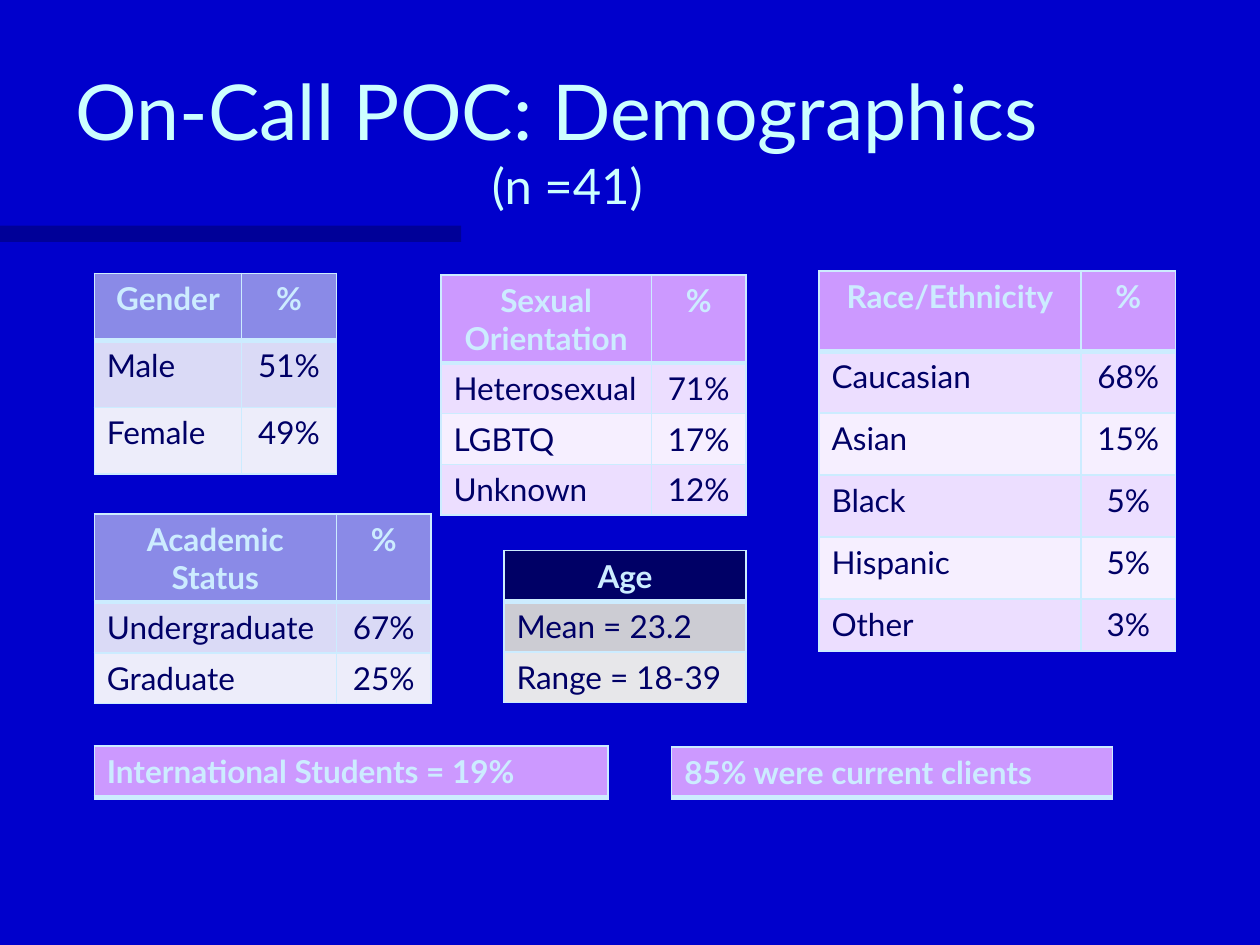
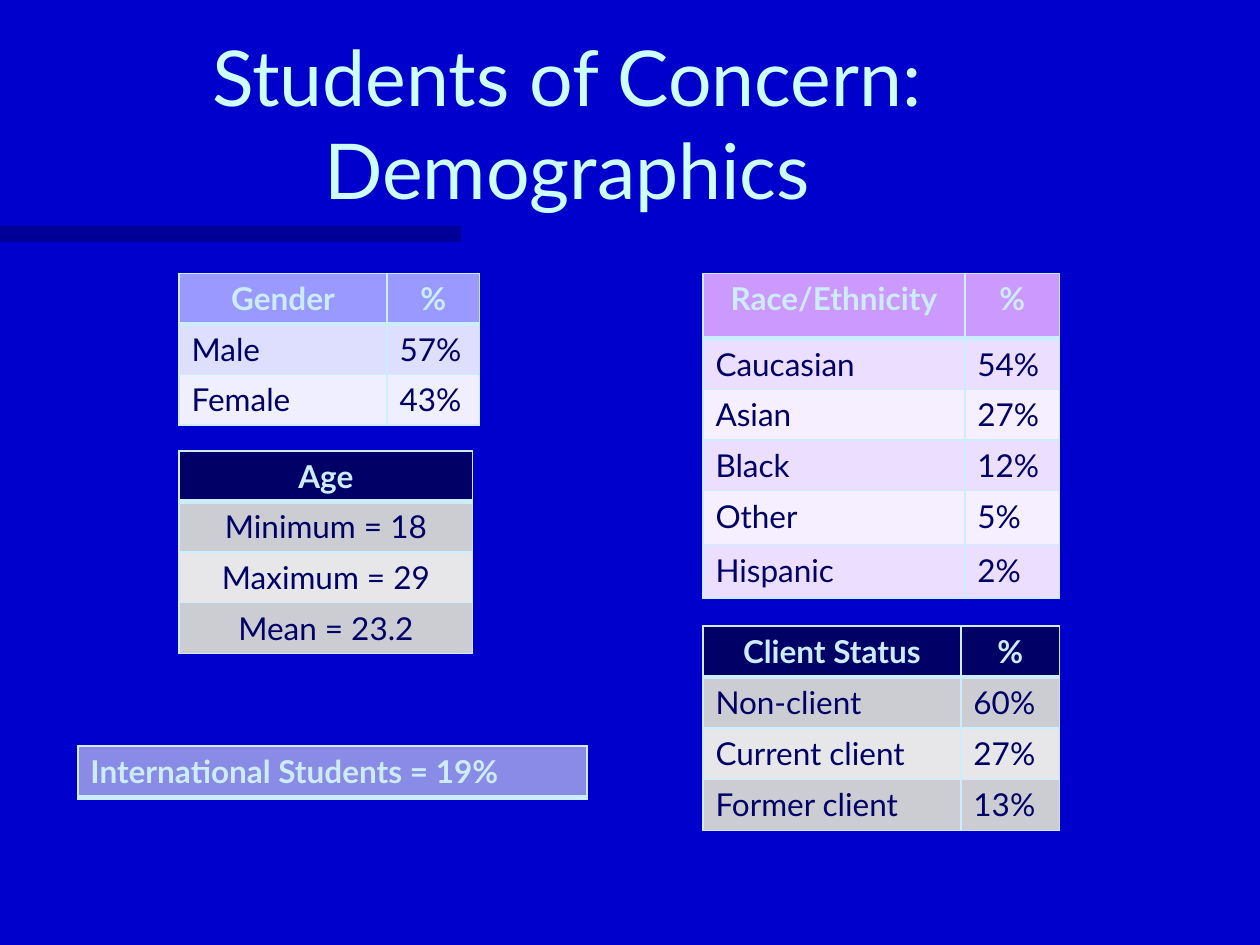
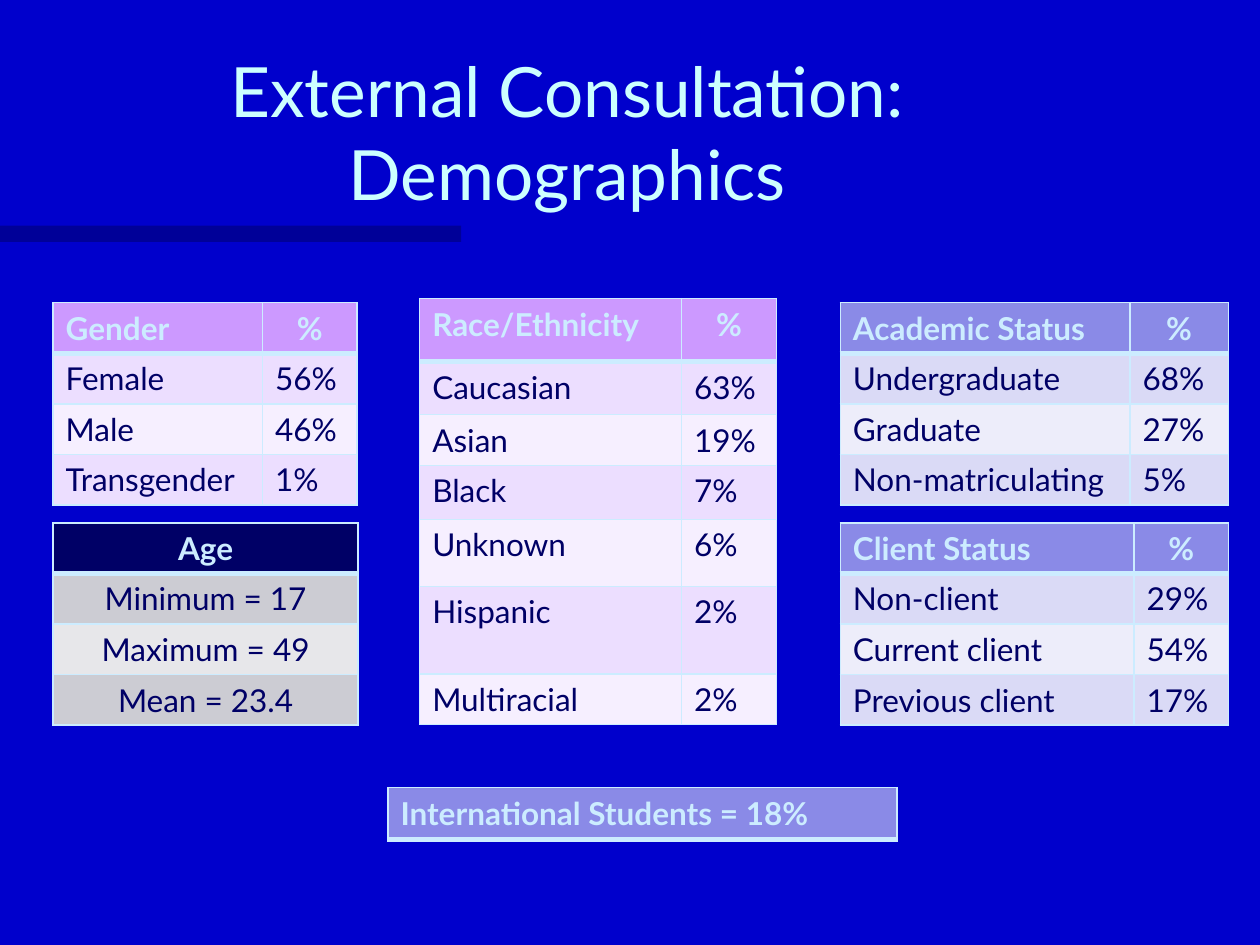
from lxml.etree import SubElement as Sub
from pptx import Presentation
from pptx.dml.color import RGBColor as Rgb
from pptx.enum.shapes import MSO_SHAPE as Shape
from pptx.enum.text import MSO_ANCHOR as Anchor, MSO_AUTO_SIZE as Fit, PP_ALIGN as Align
from pptx.oxml.ns import qn
from pptx.util import Cm, Pt

BLUE = Rgb(0x00, 0x00, 0xCC)
NAVY = Rgb(0x00, 0x00, 0x66)
ICE = Rgb(0xCC, 0xEC, 0xFF)
AQUA = Rgb(0xCC, 0xFF, 0xFF)

SLATE = (Rgb(0x8A, 0x8A, 0xE7), Rgb(0xDA, 0xDA, 0xF6), Rgb(0xED, 0xED, 0xFA))
SKY = (Rgb(0x99, 0x99, 0xFF), Rgb(0xDE, 0xDE, 0xFF), Rgb(0xEF, 0xEF, 0xFF))
LILAC = (Rgb(0xCC, 0x99, 0xFF), Rgb(0xEC, 0xDE, 0xFF), Rgb(0xF6, 0xEF, 0xFF))
DARK = (NAVY, Rgb(0xCC, 0xCC, 0xD3), Rgb(0xE7, 0xE7, 0xEA))

SIDE = {"l": Align.LEFT, "c": Align.CENTER}
HEAD = {"name": "Lato", "size": Pt(18), "bold": True}
BODY = {**HEAD, "bold": False}
ROW = 1.02
TALL = 1.76


def format_font(font, look, color):
    for key, value in look.items():
        setattr(font, key, value)
    font.color.rgb = color


class Deck:
    def __init__(self):
        self.pres = Presentation()
        self.pres.slide_width, self.pres.slide_height = Cm(25.4), Cm(19.05)
        self.master = self.pres.slide_master
        fill = self.master.background.fill
        fill.solid()
        fill.fore_color.rgb = BLUE
        self.slide = None

    def band(self):
        bar = self.slide.shapes.add_shape(Shape.RECTANGLE, 0, Cm(4.55), Cm(9.3), Cm(0.33))
        bar.shadow.inherit = False
        bar.line.fill.background()
        bar.fill.solid()
        bar.fill.fore_color.rgb = NAVY
        node = bar._element
        Sub(node.find(".//" + qn("a:srgbClr")), qn("a:alpha"), val="50000")
        node.nvSpPr.cNvPr.set("id", "20")
        self.master.shapes._spTree.insert(2, node)

    def page(self, text, size=44, note=None):
        first = self.slide is None
        self.slide = self.pres.slides.add_slide(self.pres.slide_layouts[5])
        if first:
            self.band()
        title = self.slide.shapes.title
        box = {"left": Cm(0.64), "top": Cm(1.27), "width": Cm(21.59), "height": Cm(3.18)}
        for key, value in box.items():
            setattr(title, key, value)
        frame = title.text_frame
        frame.word_wrap = True
        frame.auto_size = Fit.NONE
        frame.vertical_anchor = Anchor.BOTTOM
        para = frame.paragraphs[0]
        para.alignment = Align.CENTER
        self.run(para, text, size)
        if note:
            para.add_line_break()
            self.run(para, note, 28)

    def run(self, para, text, size):
        run = para.add_run()
        run.text = text
        format_font(run.font, {"name": "Lato", "size": Pt(size)}, AQUA)

    def edge(self, cell, top, low):
        props = cell._tc.get_or_add_tcPr()
        for spot, (tag, width) in enumerate(zip(("lnL", "lnR", "lnT", "lnB"), (1, 1, top, low))):
            line = Sub(props, qn("a:" + tag), w=str(Pt(width)))
            Sub(Sub(line, qn("a:solidFill")), qn("a:srgbClr"), val=str(ICE))
            props.insert(spot, line)

    def grid(self, left, top, cols, tones, cells, sides="cc", head="cc", rows=None):
        rows = rows or [ROW] * len(cells)
        frame = self.slide.shapes.add_table(len(cells), len(cols), Cm(left), Cm(top),
                                            Cm(sum(cols)), Cm(sum(rows)))
        table = frame.table
        table.first_row = table.horz_banding = False
        for col, width in zip(table.columns, cols):
            col.width = Cm(width)
        for row, height in zip(table.rows, rows):
            row.height = Cm(height)
        for r, words in enumerate(cells):
            for c, word in enumerate(words):
                cell = table.cell(r, c)
                cell.fill.solid()
                cell.fill.fore_color.rgb = tones[0] if r == 0 else tones[2 - r % 2]
                self.edge(cell, 3 if r == 1 else 1, 3 if r == 0 else 1)
                para = cell.text_frame.paragraphs[0]
                para.alignment = SIDE[(sides if r else head)[c]]
                run = para.add_run()
                run.text = word
                format_font(run.font, BODY if r else HEAD, NAVY if r else ICE)

    def share(self, left, top, cols, tones, name, data, **more):
        cells = [(name, "%")] + [(label, f"{part}%") for label, part in data.items()]
        self.grid(left, top, cols, tones, cells, **more)

    def age(self, left, top, width, facts, side="c"):
        self.grid(left, top, [width], DARK, [("Age",)] + [(fact,) for fact in facts], sides=side)

    def strip(self, left, top, width, tones, text, height=1.04):
        self.grid(left, top, [width], tones, [(text,)], head="l", rows=[height])


def main():
    deck = Deck()

    deck.page("On-Call POC: Demographics ", note="(n =41)")
    deck.share(1.9, 5.51, (2.97, 1.91), SLATE, "Gender", {"Male": 51, "Female": 49},
               sides="lc", rows=[1.35] * 3)
    deck.share(1.9, 10.36, (4.88, 1.91), SLATE, "Academic Status",
               {"Undergraduate": 67, "Graduate": 25}, sides="lc", rows=[TALL, ROW, ROW])
    deck.share(16.51, 5.46, (5.28, 1.91), LILAC, "Race/Ethnicity",
               {"Caucasian": 68, "Asian": 15, "Black": 5, "Hispanic": 5, "Other": 3},
               sides="lc", rows=[1.62] + [1.25] * 4 + [1.04])
    deck.share(8.89, 5.54, (4.24, 1.91), LILAC, "Sexual Orientation",
               {"Heterosexual": 71, "LGBTQ": 17, "Unknown": 12},
               sides="lc", rows=[TALL] + [ROW] * 3)
    deck.strip(1.9, 15.04, 10.36, LILAC, "International Students = 19%")
    deck.strip(13.54, 15.06, 8.89, LILAC, "85% were current clients", ROW)
    deck.age(10.16, 11.1, 4.88, ("Mean = 23.2", "Range = 18-39"), "l")

    deck.page("Students of Concern: Demographics")
    deck.age(3.61, 9.09, 5.92, ("Minimum = 18", "Maximum = 29", "Mean = 23.2"))
    deck.share(14.17, 5.51, (5.28, 1.91), LILAC, "Race/Ethnicity",
               {"Caucasian": 54, "Asian": 27, "Black": 12, "Other": 5, "Hispanic": 2},
               sides="ll", rows=[1.32, ROW, ROW, ROW, 1.09, 1.07])
    deck.strip(1.57, 15.04, 10.26, SLATE, "International Students = 19%")
    deck.share(3.61, 5.51, (4.19, 1.87), SKY, "Gender", {"Male": 57, "Female": 43}, sides="ll")
    deck.share(14.17, 12.62, (5.2, 1.99), DARK, "Client Status",
               {"Non-client": 60, "Current client": 27, "Former client": 13},
               sides="ll", rows=[1.03] * 4)

    deck.page("External Consultation: Demographics", 39.6)
    deck.share(1.07, 6.1, (4.22, 1.91), LILAC, "Gender",
               {"Female": 56, "Male": 46, "Transgender": 1}, sides="ll", head="lc")
    deck.age(1.07, 10.54, 6.15, ("Minimum = 17", "Maximum = 49", "Mean = 23.4"))
    deck.share(8.46, 6.02, (5.28, 1.91), LILAC, "Race/Ethnicity",
               {"Caucasian": 63, "Asian": 19, "Black": 7, "Unknown": 6,
                "Hispanic": 2, "Multiracial": 2},
               sides="ll", head="lc", rows=[1.27, 1.07, ROW, 1.09, 1.35, 1.77, ROW])
    deck.share(16.94, 6.1, (5.84, 1.98), SLATE, "Academic Status",
               {"Undergraduate": 68, "Graduate": 27, "Non-matriculating": 5},
               sides="ll", head="lc")
    deck.share(16.94, 10.54, (5.92, 1.91), SLATE, "Client Status",
               {"Non-client": 29, "Current client": 54, "Previous client": 17},
               sides="ll", head="lc")
    deck.strip(7.82, 15.88, 10.26, SLATE, "International Students = 18%")

    deck.pres.save("out.pptx")


if __name__ == "__main__":
    main()
